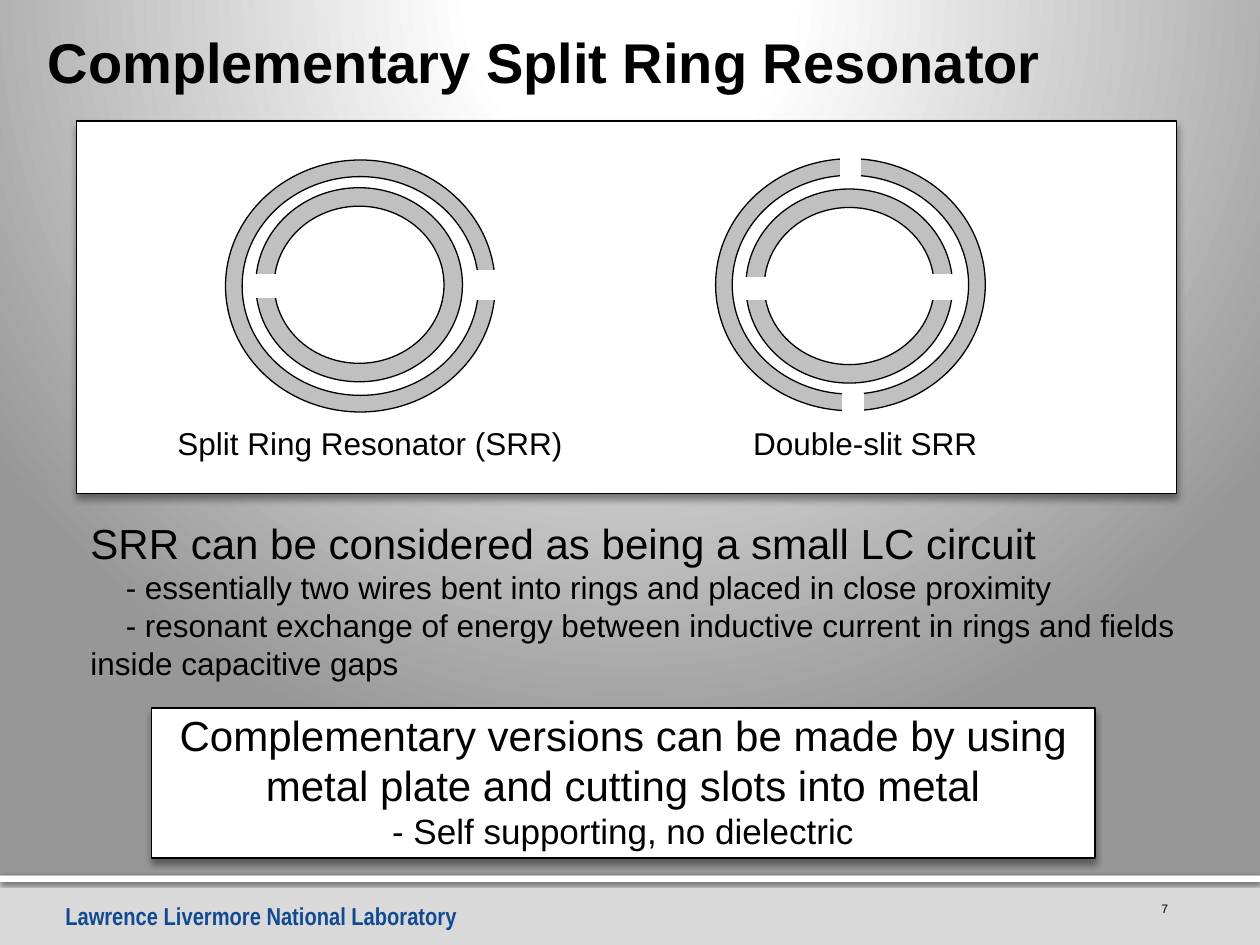
from lxml.etree import SubElement
from pptx import Presentation
from pptx.dml.color import RGBColor
from pptx.enum.shapes import MSO_SHAPE
from pptx.enum.text import MSO_ANCHOR, PP_ALIGN
from pptx.oxml import parse_xml
from pptx.oxml.ns import nsdecls, qn
from pptx.util import Inches, Pt

COLORS = {"black": "000000", "white": "FFFFFF", "ring": "C0C0C0",
          "footer": "D9D9D9", "edge": "979797", "lab": "124A91"}
COLUMNS, ROWS = 100, 75
PANEL_SHADOW = (40, 4, 3)


class Deck:
    def __init__(self):
        self.presentation = Presentation()
        self.presentation.slide_width = Inches(10)
        self.presentation.slide_height = Inches(7.5)
        self.slide = self.presentation.slides.add_slide(self.presentation.slide_layouts[6])
        self.shapes = self.slide.shapes

    def place(self, column, row, columns, rows):
        cell_width = self.presentation.slide_width / COLUMNS
        cell_height = self.presentation.slide_height / ROWS
        return (round(column * cell_width), round(row * cell_height),
                round(columns * cell_width), round(rows * cell_height))

    def color(self, name):
        return RGBColor.from_string(COLORS[name])

    def background(self, stops):
        self.slide.background.fill.solid()
        solid = self.slide.element.find(".//" + qn("p:bgPr")).find(qn("a:solidFill"))
        stop_xml = "".join(
            f'<a:gs pos="{share * 1000}"><a:srgbClr val="{COLORS[name]}"/></a:gs>'
            for share, name in stops)
        solid.getparent().replace(solid, parse_xml(
            f'<a:gradFill {nsdecls("a")} rotWithShape="1"><a:gsLst>{stop_xml}</a:gsLst>'
            '<a:path path="circle"><a:fillToRect l="10000" t="-25000" r="10000" b="125000"/>'
            '</a:path></a:gradFill>'))

    def shape(self, kind, area, fill, line=None, shadow=None):
        shape = self.shapes.add_shape(kind, *self.place(*area))
        shape.shadow.inherit = False
        shape.fill.solid()
        shape.fill.fore_color.rgb = self.color(fill)
        if line:
            shape.line.color.rgb = self.color(line)
            shape.line.width = Pt(0.75)
        else:
            shape.line.fill.background()
        if shadow:
            opacity, blur, distance = shadow
            effects = shape.element.spPr.find(qn("a:effectLst"))
            outer = SubElement(effects, qn("a:outerShdw"), blurRad=str(Pt(blur)),
                               dist=str(Pt(distance)), dir="5400000", rotWithShape="0")
            tint = SubElement(outer, qn("a:srgbClr"), val=COLORS["black"])
            SubElement(tint, qn("a:alpha"), val=str(opacity * 1000))
        return shape

    def box(self, area, fill, line=None, shadow=None):
        return self.shape(MSO_SHAPE.RECTANGLE, area, fill, line, shadow)

    def ring(self, area, thickness, rotation=0):
        ring = self.shape(MSO_SHAPE.DONUT, area, "ring", "black")
        ring.adjustments[0] = thickness
        ring.rotation = rotation

    def resonator(self, outer, inner, gaps):
        self.ring((*outer, 21.4, 20), 0.066)
        self.ring((*inner, 16.4, 15.4), 0.095, 180)
        for gap in gaps:
            self.box(gap, "white", "white")

    def set_lines(self, frame, lines, color="black", font="Arial", bold=False,
                  align=PP_ALIGN.LEFT):
        for number, (words, size, indent) in enumerate(lines):
            paragraph = frame.add_paragraph() if number else frame.paragraphs[0]
            paragraph.text = words
            paragraph.alignment = align
            if indent:
                paragraph._p.get_or_add_pPr().set("indent", str(Inches(indent)))
            paragraph.font.name = font
            paragraph.font.size = Pt(size)
            paragraph.font.bold = bold
            paragraph.font.color.rgb = self.color(color)

    def text(self, area, lines, wrap=True, **style):
        frame = self.shapes.add_textbox(*self.place(*area)).text_frame
        frame.word_wrap = wrap
        self.set_lines(frame, lines, **style)

    def start_group(self):
        self.shapes = self.slide.shapes.add_group_shape().shapes

    def end_group(self):
        self.shapes = self.slide.shapes


def main():
    deck = Deck()
    deck.background([(0, "white"), (12, "white"), (20, "white"), (100, "edge")])

    deck.box((0, 69.5, 100, 5.5), "footer", shadow=(38, 3.1, 2))
    deck.box((0, 69.5, 100, 0.5), "white", shadow=(60, 2.5, 0.8))
    deck.text((4.2, 71, 33.4, 3.4), [("Lawrence Livermore National Laboratory", 14, 0)],
              color="lab", font="Arial Narrow", bold=True)
    deck.text((89.8, 71, 3.9, 1.7), [("7", 7, 0)], align=PP_ALIGN.RIGHT)

    deck.text((2.8, 1.7, 81.5, 6.4), [("Complementary Split Ring Resonator", 32, 0)],
              wrap=False, bold=True)
    deck.text((6.2, 40.6, 90.7, 20.5), [
        ("SRR can be considered as being a small LC circuit", 24, 0),
        ("- essentially two wires bent into rings and placed in close proximity", 18, 0.28),
        ("- resonant exchange of energy between inductive current in rings and fields "
         "inside capacitive gaps", 18, 0.28)])

    deck.start_group()
    deck.box((6.1, 9.6, 87.3, 29.6), "white", "black", PANEL_SHADOW)
    deck.resonator((17.9, 12.7), (20.3, 14.9),
                   [(37.8, 21.5, 1.5, 2.3), (20.2, 21.8, 2.5, 1.8)])
    deck.resonator((56.8, 12.6), (59.2, 15),
                   [(59, 22, 2.5, 1.8), (72.5, 21.8, 3.2, 2),
                    (66.7, 12, 1.6, 2), (66.9, 31.2, 1.6, 2)])
    for column, columns, caption in [(13.1, 32.9, "Split Ring Resonator (SRR)"),
                                     (58.8, 20, "Double-slit SRR")]:
        deck.text((column, 33.2, columns, 4), [(caption, 18, 0)], wrap=False)
    deck.end_group()

    conclusion = deck.box((12, 56.2, 74.9, 11.9), "white", "black", PANEL_SHADOW).text_frame
    conclusion.word_wrap = True
    conclusion.vertical_anchor = MSO_ANCHOR.BOTTOM
    deck.set_lines(conclusion, [
        ("Complementary versions can be made by using metal plate and cutting slots "
         "into metal", 24, 0),
        ("- Self supporting, no dielectric", 20, 0)], align=PP_ALIGN.CENTER)

    deck.presentation.save("out.pptx")


if __name__ == "__main__":
    main()
